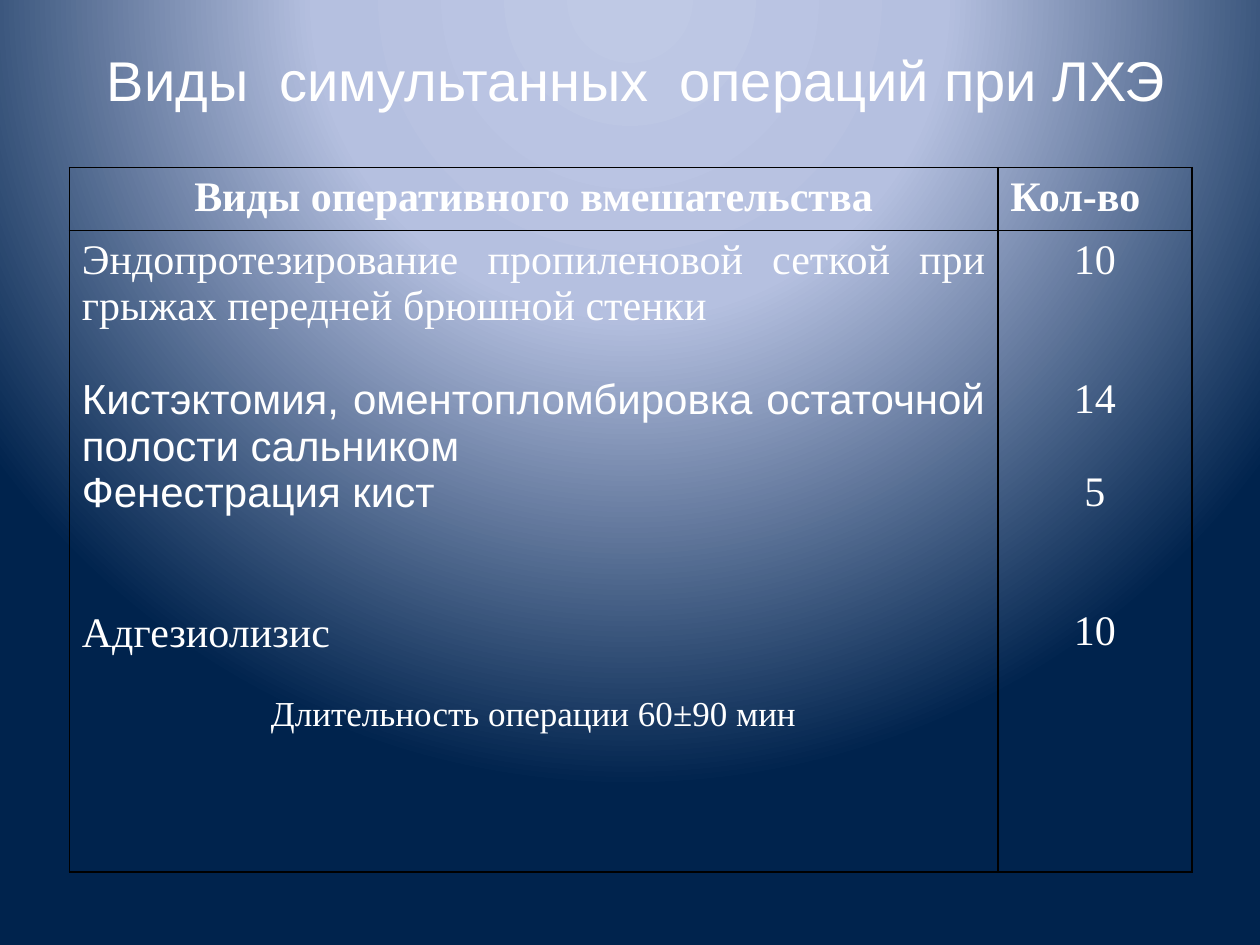
from pptx import Presentation
from pptx.dml.color import RGBColor
from pptx.enum import text
from pptx.oxml import parse_xml, ns
from pptx.util import Inches, Pt

COLORS = {"glow": "BFC9E5", "mist": "B5C0E0", "navy": "00234D",
          "text": "FFFFFF", "line": "000000"}
SERIF, SANS = "Times New Roman", "Arial"
LINE = 1.107  # height of a serif line relative to its size
MID, JUST = text.PP_ALIGN.CENTER, text.PP_ALIGN.JUSTIFY
COLS, ROWS = (7.37, 1.54), (0.45, 5.09)

# Each line: wording, alignment, format values, gap above in points
HEAD = [[("Виды оперативного вмешательства", MID, {"bold": True}, 0)],
        [("Кол-во", JUST, {"bold": True}, 0)]]
GAP = 24 * LINE
KINDS = [
    ("Эндопротезирование пропиленовой сеткой при грыжах передней брюшной стенки",
     JUST, {}, 0),
    ("Кистэктомия, оментопломбировка остаточной полости сальником",
     JUST, {"name": SANS}, GAP),
    ("Фенестрация кист", JUST, {"name": SANS}, 0),
    ("Адгезиолизис", JUST, {}, 2 * GAP),
    ("Длительность операции 60±90 мин", MID, {"size": Pt(20)}, 20 * LINE),
]
COUNTS = [(num, MID, {}, lines * GAP)
          for num, lines in (("10", 0), ("14", 2), ("5", 1), ("10", 2))]


def paint(slide):
    """Fill the background with a round glow centred above the slide."""
    stops = "".join(
        f'<a:gs pos="{pos}000"><a:srgbClr val="{COLORS[key]}"/></a:gs>'
        for pos, key in ((0, "glow"), (40, "mist"), (100, "navy")))
    back = parse_xml(
        f'<p:bg {ns.nsdecls("p", "a")}><p:bgPr><a:gradFill rotWithShape="1">'
        f'<a:gsLst>{stops}</a:gsLst><a:path path="circle">'
        '<a:fillToRect l="50000" t="-80000" r="50000" b="180000"/></a:path>'
        '</a:gradFill><a:effectLst/></p:bgPr></p:bg>')
    slide.element.cSld.insert(0, back)


def write(frame, lines):
    for i, (words, align, form, gap) in enumerate(lines):
        par = frame.add_paragraph() if i else frame.paragraphs[0]
        par.alignment = align
        par.space_before = Pt(round(gap, 1))
        run = par.add_run()
        run.text = words
        base = {"name": SERIF, "size": Pt(24), "bold": False}
        for key, val in {**base, **form}.items():
            setattr(run.font, key, val)
        run.font.color.rgb = RGBColor.from_string(COLORS["text"])


def add_title(slide, words):
    box = slide.shapes.add_textbox(
        Inches(0.47), Inches(-0.16), Inches(9.17), Inches(1.57))
    frame = box.text_frame
    frame.word_wrap = True
    frame.vertical_anchor = text.MSO_ANCHOR.MIDDLE
    write(frame, [(words, MID, {"name": SANS, "size": Pt(32)}, 0)])


def edge(cell):
    """Draw a thin line on all four sides of a cell."""
    props = cell._tc.get_or_add_tcPr()
    for i, side in enumerate("LRTB"):
        props.insert(i, parse_xml(
            f'<a:ln{side} {ns.nsdecls("a")} w="12700"><a:solidFill>'
            f'<a:srgbClr val="{COLORS["line"]}"/></a:solidFill></a:ln{side}>'))


def add_grid(slide, rows):
    table = slide.shapes.add_table(
        len(ROWS), len(COLS), Inches(0.55), Inches(1.33),
        Inches(sum(COLS)), Inches(sum(ROWS))).table
    table.first_row = table.horz_banding = False
    for col, width in zip(table.columns, COLS):
        col.width = Inches(width)
    for row, height, cells in zip(table.rows, ROWS, rows):
        row.height = Inches(height)
        for cell, lines in zip(row.cells, cells):
            cell.fill.background()
            edge(cell)
            write(cell.text_frame, lines)


def main():
    deck = Presentation()
    deck.slide_width, deck.slide_height = Inches(10), Inches(7.5)
    slide = deck.slides.add_slide(deck.slide_layouts[6])
    paint(slide)
    add_title(slide, "Виды  симультанных  операций при ЛХЭ")
    add_grid(slide, [HEAD, [KINDS, COUNTS]])
    deck.save("out.pptx")


if __name__ == "__main__":
    main()
